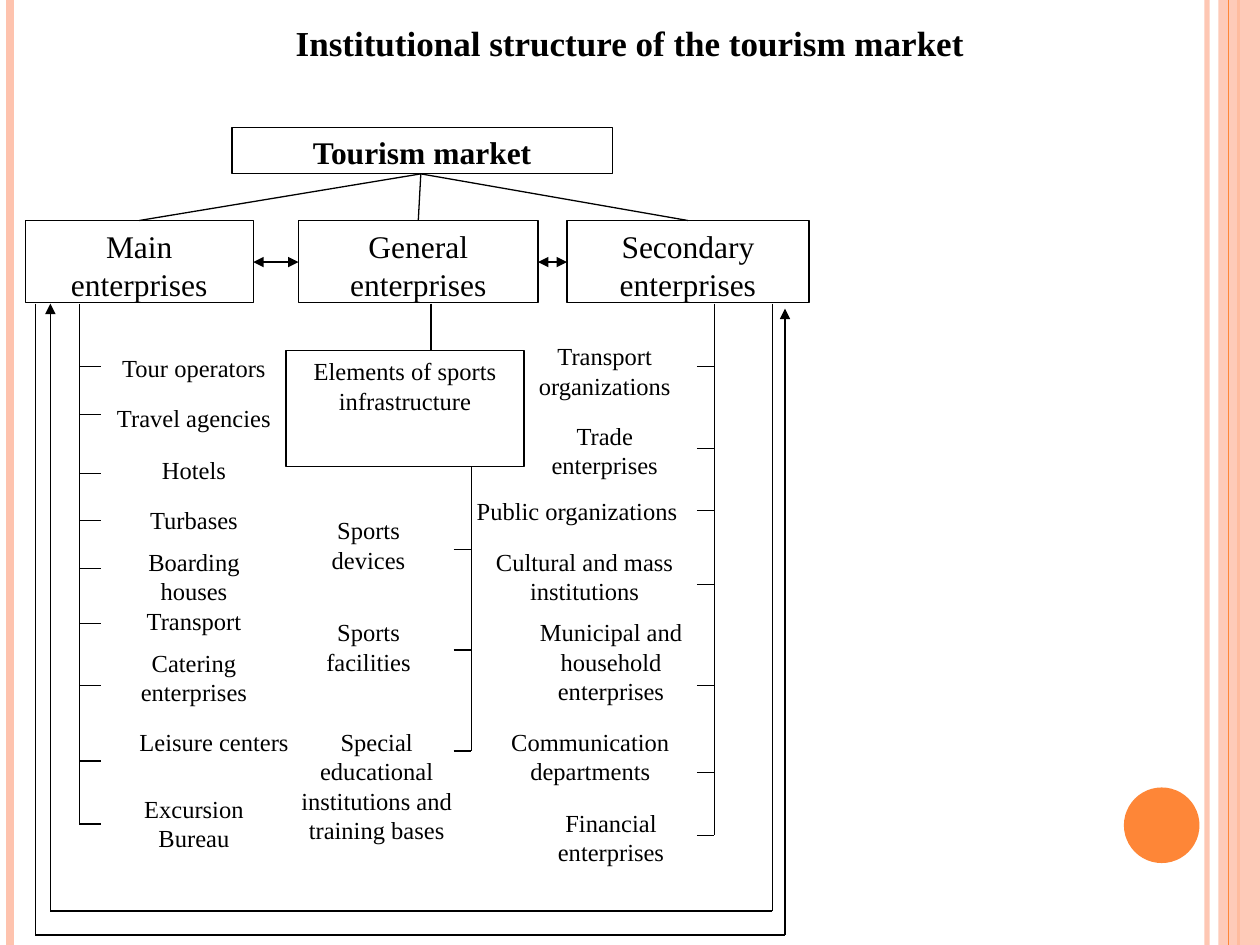
import pptx
import pptx.util
import pptx.dml.color
import pptx.enum.shapes
import pptx.enum.text
import pptx.oxml
import pptx.oxml.ns

Inches = pptx.util.Inches
SHAPES = pptx.enum.shapes.MSO_SHAPE
ANCHORS = pptx.enum.text.MSO_ANCHOR

THEME = {
    "font": "Times New Roman", "ink": "000000", "paper": "FFFFFF",
    "peach": "FEC3AE", "orange": "FE8637",
    "title": 20, "heading": 18, "item": 14, "hairline": 0.75,
}

TITLE = "Institutional structure of the tourism market"
HEADINGS = [
    ("Main enterprises", 0.2, 1.81),
    ("General enterprises", 2.37, 1.9),
    ("Secondary enterprises", 4.5, 1.92),
]
HEADING_TOP, HEADING_HEIGHT = 1.75, 0.65

MAIN_LEFT, MAIN_WIDTH = 0.81, 1.46
MAIN_ITEMS = [
    ("Tour operators", 2.75, 0.4),
    ("Travel agencies", 3.15, 0.4),
    ("Hotels", 3.56, 0.4),
    ("Turbases", 3.96, 0.4),
    ("Transport", 4.76, 0.4),
    ("Catering enterprises", 5.09, 0.63),
    ("Boarding houses", 4.29, 0.56),
]
SECONDARY_ITEMS = [
    ("Transport organizations", 4.07, 2.66, 1.46, 0.63),
    ("Trade enterprises", 4.07, 3.29, 1.46, 0.75),
    ("Public organizations", 3.62, 3.89, 1.92, 0.47),
    ("Cultural and mass institutions", 3.75, 4.29, 1.78, 0.67),
    ("Municipal and household enterprises", 4.16, 4.85, 1.38, 0.87),
    ("Communication departments", 3.84, 5.72, 1.69, 0.63),
    ("Financial enterprises", 4.16, 6.36, 1.38, 0.61),
]
GENERAL_ITEMS = [
    ("Sports devices", 2.27, 4.04, 1.31, 0.6),
    ("Sports facilities", 2.27, 4.85, 1.31, 0.6),
    ("Special educational institutions and training bases", 2.22, 5.72, 1.54, 1.16),
]
OPEN_ITEMS = [
    ("Leisure centers", 0.81, 5.72, 1.78, 0.63),
    ("Excursion Bureau", 0.81, 6.25, 1.46, 0.63),
]

BRANCHES = [
    (0.63, 2.41, 0.17, [2.91, 3.29, 3.76, 4.13, 4.51, 4.95, 5.44, 6.04, 6.54]),
    (5.67, 2.41, -0.14, [2.91, 3.56, 4.05, 4.64, 5.44, 6.13, 6.63]),
    (3.74, 3.71, -0.14, [4.36, 5.16, 5.96]),
]
FEEDBACK_LOOPS = [
    [(6.13, 2.41), (6.13, 7.23), (0.4, 7.23), (0.4, 2.41)],
    [(0.28, 2.41), (0.28, 7.42), (6.23, 7.42), (6.23, 2.45)],
]
STRIPES = [
    (9.58, "peach", 3, 93),
    (0.08, "peach", 4.5, 100),
    (9.83, "orange", 1.5, 100),
]


def color(name):
    return pptx.dml.color.RGBColor.from_string(THEME[name])


def set_alpha(fill_parent, percent):
    for element in fill_parent.iter(pptx.oxml.ns.qn("a:srgbClr")):
        alpha = pptx.oxml.parse_xml(
            f'<a:alpha {pptx.oxml.ns.nsdecls("a")} val="{percent * 1000}"/>')
        element.append(alpha)


def add_line(slide, start, end, ink="ink", width=THEME["hairline"], arrows=(), alpha=100):
    points = [Inches(value) for value in (*start, *end)]
    connector = slide.shapes.add_connector(
        pptx.enum.shapes.MSO_CONNECTOR.STRAIGHT, *points)
    connector.line.color.rgb = color(ink)
    connector.line.width = pptx.util.Pt(width)
    outline = connector.line._get_or_add_ln()
    if alpha < 100:
        set_alpha(outline, alpha)
    for arrow in arrows:
        outline.append(pptx.oxml.parse_xml(
            f'<a:{arrow} {pptx.oxml.ns.nsdecls("a")} type="triangle"/>'))
    connector._element.spPr.append(pptx.oxml.parse_xml(
        f'<a:effectLst {pptx.oxml.ns.nsdecls("a")}/>'))


def add_panel(slide, box, fill, outline=None, kind=SHAPES.RECTANGLE):
    shape = slide.shapes.add_shape(kind, *[Inches(value) for value in box])
    shape.shadow.inherit = False
    shape.fill.solid()
    shape.fill.fore_color.rgb = color(fill)
    if outline:
        shape.line.color.rgb = color(outline)
        shape.line.width = pptx.util.Pt(THEME["hairline"])
    else:
        shape.line.fill.background()
    return shape


def add_text(slide, text, box, size="item", bold=False, fill="paper", outline=None,
             anchor=ANCHORS.TOP, wrap=True):
    if fill:
        shape = add_panel(slide, box, fill, outline)
    else:
        shape = slide.shapes.add_textbox(*[Inches(value) for value in box])
    frame = shape.text_frame
    frame.word_wrap = wrap
    frame.vertical_anchor = anchor
    paragraph = frame.paragraphs[0]
    paragraph.alignment = pptx.enum.text.PP_ALIGN.CENTER
    run = paragraph.add_run()
    run.text = text
    run.font.name = THEME["font"]
    run.font.size = pptx.util.Pt(THEME[size])
    run.font.bold = bold
    run.font.color.rgb = color("ink")


def add_decoration(slide):
    for x, ink, width, alpha in STRIPES:
        add_line(slide, (x, 0), (x, 7.5), ink=ink, width=width, alpha=alpha)
    band = add_panel(slide, (9.67, 0, 0.33, 7.5), "peach")
    set_alpha(band._element.spPr, 87)
    add_line(slide, (9.75, 0), (9.75, 7.5), ink="orange")
    add_panel(slide, (8.92, 6.25, 0.6, 0.6), "orange", kind=SHAPES.OVAL)


def add_boxes(slide):
    add_text(slide, "Tourism market", (1.84, 1.01, 3.02, 0.37),
             size="heading", bold=True, outline="ink")
    for text, left, width in HEADINGS:
        add_text(slide, text, (left, HEADING_TOP, width, HEADING_HEIGHT),
                 size="heading", outline="ink")
    for text, top, height in MAIN_ITEMS:
        add_text(slide, text, (MAIN_LEFT, top, MAIN_WIDTH, height))
    for text, *box in SECONDARY_ITEMS:
        add_text(slide, text, box, outline="paper")
    add_text(slide, "Elements of sports infrastructure", (2.27, 2.78, 1.89, 0.92),
             outline="ink")
    for text, *box in GENERAL_ITEMS:
        add_text(slide, text, box)
    for text, *box in OPEN_ITEMS:
        add_text(slide, text, box, fill=None)


def add_links(slide):
    for text, left, width in HEADINGS:
        add_line(slide, (3.34, 1.38), (left + width / 2, HEADING_TOP))
    for (_, left, width), (_, next_left, _) in zip(HEADINGS, HEADINGS[1:]):
        add_line(slide, (left + width, 2.08), (next_left, 2.08),
                 arrows=("headEnd", "tailEnd"))
    add_line(slide, (3.42, 2.41), (3.42, 2.78))
    for x, top, reach, ticks in BRANCHES:
        add_line(slide, (x, top), (x, ticks[-1]))
        for y in ticks:
            add_line(slide, (x + reach, y), (x, y))
    for corners in FEEDBACK_LOOPS:
        for start, end in zip(corners, corners[1:]):
            arrows = ("tailEnd",) if end == corners[-1] else ()
            add_line(slide, start, end, arrows=arrows)


def main():
    presentation = pptx.Presentation()
    presentation.slide_width, presentation.slide_height = Inches(10), Inches(7.5)
    slide = presentation.slides.add_slide(presentation.slide_layouts[6])
    add_decoration(slide)
    add_boxes(slide)
    add_links(slide)
    add_text(slide, TITLE, (2.23, -0.22, 5.54, 0.77), size="title", bold=True,
             fill=None, anchor=ANCHORS.BOTTOM, wrap=False)
    presentation.save("out.pptx")


if __name__ == "__main__":
    main()
